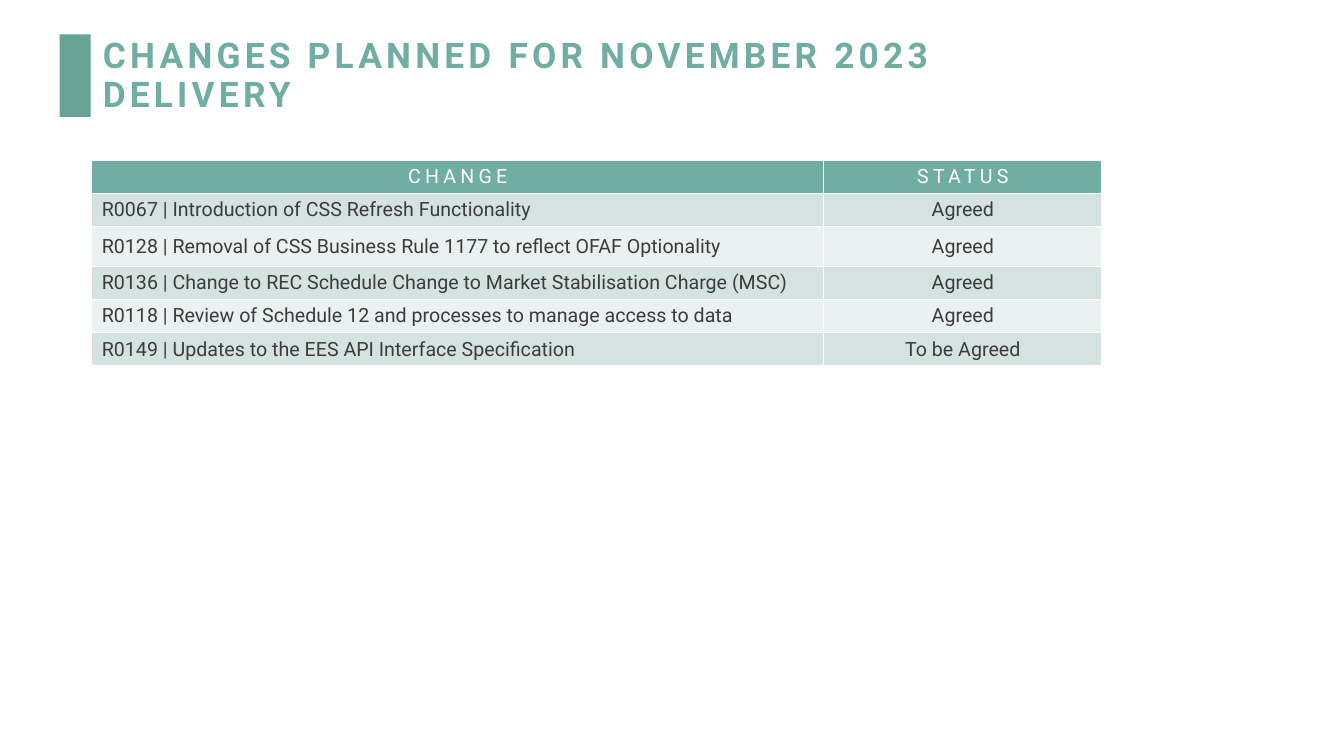
from lxml import etree
from pptx import Presentation
from pptx import util as u
from pptx.dml.color import RGBColor
from pptx.enum import shapes, text
from pptx.oxml import ns

TEAL = RGBColor(0x70, 0xAD, 0xA3)
ACCENT = RGBColor(0x68, 0xA4, 0x95)
DARK_BAND = RGBColor(0xD5, 0xE3, 0xE0)
LIGHT_BAND = RGBColor(0xEB, 0xF1, 0xF0)
INK = RGBColor(0x3C, 0x3C, 0x3B)
WHITE = RGBColor(0xFF, 0xFF, 0xFF)

CHANGES = [
    ("CHANGE", "STATUS"),
    ("R0067 | Introduction of CSS Refresh Functionality", "Agreed"),
    ("R0128 | Removal of CSS Business Rule 1177 to reflect OFAF Optionality", "Agreed"),
    ("R0136 | Change to REC Schedule Change to Market Stabilisation Charge (MSC)", "Agreed"),
    ("R0118 | Review of Schedule 12 and processes to manage access to data", "Agreed"),
    ("R0149 | Updates to the EES API Interface Specification", "To be Agreed"),
]
COLUMN_WIDTHS = [7.26, 2.76]
ROW_HEIGHTS = [0.33, 0.33, 0.39, 0.33, 0.33, 0.33]


class SlideBuilder:
    font_name = "Roboto"

    def __init__(self, page):
        self.page = page

    def set_words(self, frame, words, size, color, align, bold=False, spacing=0):
        frame.text = words
        para = frame.paragraphs[0]
        para.alignment = align
        span = para.runs[0]
        span.font.name = self.font_name
        span.font.size = u.Pt(size)
        span.font.bold = bold
        span.font.color.rgb = color
        if spacing:
            span.font._element.set("spc", str(spacing * 100))
        return para

    def bar(self, left, top, width, height, color):
        box = self.page.shapes.add_shape(
            shapes.MSO_SHAPE.RECTANGLE,
            u.Inches(left), u.Inches(top), u.Inches(width), u.Inches(height))
        box.shadow.inherit = False
        box.fill.solid()
        box.fill.fore_color.rgb = color
        box.line.fill.background()

    def title(self, words, left, top, width, height):
        box = self.page.shapes.title
        box.left, box.top = u.Inches(left), u.Inches(top)
        box.width, box.height = u.Inches(width), u.Inches(height)
        frame = box.text_frame
        frame.word_wrap = True
        frame.auto_size = text.MSO_AUTO_SIZE.NONE
        frame.vertical_anchor = text.MSO_ANCHOR.MIDDLE
        para = self.set_words(frame, words, 25.2, TEAL, text.PP_ALIGN.LEFT,
                              bold=True, spacing=3)
        para.line_spacing = 0.9

    def borders(self, cell):
        properties = cell._tc.get_or_add_tcPr()
        for side in ("lnL", "lnR", "lnT", "lnB"):
            line = etree.SubElement(properties, ns.qn(f"a:{side}"), w=str(u.Pt(1)))
            fill = etree.SubElement(line, ns.qn("a:solidFill"))
            etree.SubElement(fill, ns.qn("a:srgbClr"), val=str(WHITE))

    def table(self, rows, left, top, widths, heights):
        table = self.page.shapes.add_table(
            len(rows), len(widths), u.Inches(left), u.Inches(top),
            u.Inches(sum(widths)), u.Inches(sum(heights))).table
        for column, width in zip(table.columns, widths):
            column.width = u.Inches(width)
        for row, height in zip(table.rows, heights):
            row.height = u.Inches(height)
        for row_index, row in enumerate(rows):
            header = row_index == 0
            band = TEAL if header else DARK_BAND if row_index % 2 else LIGHT_BAND
            for column_index, words in enumerate(row):
                cell = table.cell(row_index, column_index)
                centred = header or column_index == 1
                self.set_words(cell.text_frame, words, 14, WHITE if header else INK,
                               text.PP_ALIGN.CENTER if centred else text.PP_ALIGN.LEFT,
                               spacing=3 if header else 0)
                cell.vertical_anchor = text.MSO_ANCHOR.MIDDLE
                self.borders(cell)
                cell.fill.solid()
                cell.fill.fore_color.rgb = band


def main():
    deck = Presentation()
    deck.slide_width, deck.slide_height = u.Inches(13.33), u.Inches(7.5)
    builder = SlideBuilder(deck.slides.add_slide(deck.slide_layouts[5]))
    builder.bar(0.59, 0.34, 0.31, 0.82, ACCENT)
    builder.title("CHANGES PLANNED FOR NOVEMBER 2023 DELIVERY", 0.92, 0.4, 10.15, 0.72)
    builder.table(CHANGES, 0.91, 1.59, COLUMN_WIDTHS, ROW_HEIGHTS)
    deck.save("out.pptx")


if __name__ == "__main__":
    main()
